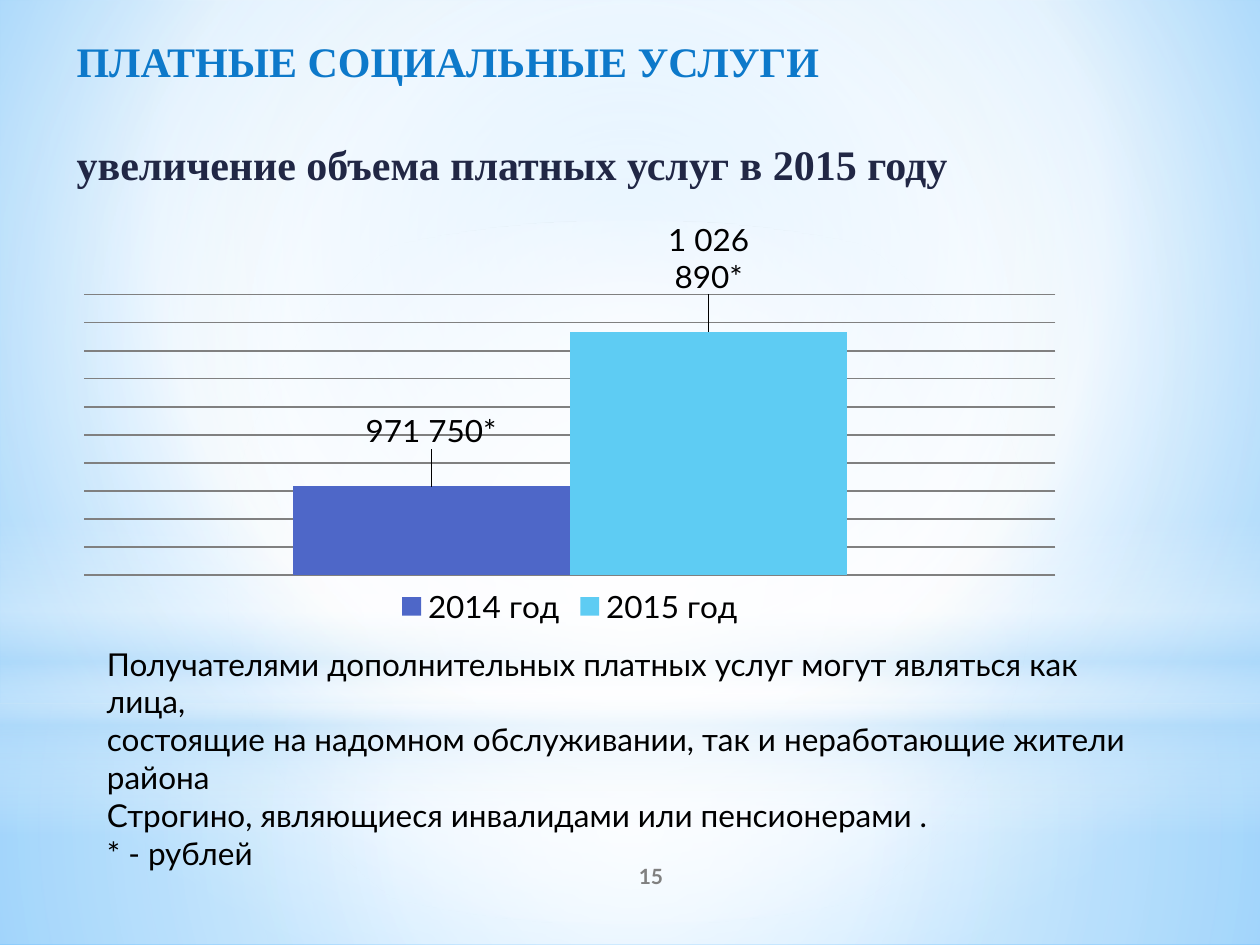
import pptx
import pptx.chart.data
import pptx.dml.color
import pptx.enum.chart
import pptx.enum.shapes
import pptx.enum.text
import pptx.oxml
import pptx.oxml.ns
import pptx.util
from lxml import etree

Pt = pptx.util.Pt
qn = pptx.oxml.ns.qn
ALIGN = pptx.enum.text.PP_ALIGN
ANCHOR = pptx.enum.text.MSO_ANCHOR
SHAPES = pptx.enum.shapes.MSO_SHAPE

THEME = {
    "heading_font": "Times New Roman", "body_font": "Lato",
    "heading_size": 24, "body_size": 18, "number_size": 12,
    "heading": "0D79CA", "subheading": "212745", "body": "000000",
    "number": "808080", "grid": "808080",
    "white": "FFFFFF", "haze": "B4DCFA", "sky": "9ED5FF", "deep_sky": "5BB9FF",
}

HEADING = [("ПЛАТНЫЕ СОЦИАЛЬНЫЕ УСЛУГИ", "heading"),
           ("увеличение объема платных услуг в 2015 году", "subheading")]
RECIPIENTS = [(line, "body") for line in (
    "Получателями дополнительных платных услуг могут являться как лица,",
    "состоящие на надомном обслуживании, так и неработающие жители района",
    "Строгино, являющиеся инвалидами или пенсионерами .",
    "* - рублей",
)]
PAGE_NUMBER = [("15", "number")]
YEARS = [("2014 год", 971750, "971 750*", "4E67C8"),
         ("2015 год", 1026890, "1 026 890*", "5ECCF3")]
AXIS_MIN, AXIS_MAX, AXIS_STEP = 940000, 1040000, 10000
PLOT_AREA = {"x": 0.02, "y": 0.16, "w": 0.96, "h": 0.7}
LABEL_LIFT = -0.08

CENTRE = (50, 50, 50, 50)
BACKDROP = ([(0, "sky", 100), (60, "white", 100), (100, "deep_sky", 100)], (20, 10, 20, 60))
LAYERS = [
    (SHAPES.RECTANGLE, 402, 138,
     [(0, "white", 91), (37, "white", 76), (100, "haze", 79)], CENTRE),
    (SHAPES.RECTANGLE, 0, 402,
     [(0, "white", 89), (48, "white", 62), (100, "haze", 79)], CENTRE),
    (SHAPES.RECTANGLE, 297, 180,
     [(0, "white", 0), (29, "white", 30), (45, "haze", 40),
      (55, "white", 26), (65, "haze", 60), (100, "white", 0)], None),
    (SHAPES.OVAL, 126, 402, [(0, "white", 100), (56, "white", 0)], CENTRE),
]


def rgb(value):
    return pptx.dml.color.RGBColor.from_string(value)


def set_gradient(fill, owner, stops, focus):
    fill.gradient()
    gradient = next(owner.iter(qn("a:gradFill")))
    for child in list(gradient):
        gradient.remove(child)
    stop_list = etree.SubElement(gradient, qn("a:gsLst"))
    for position, colour, opacity in stops:
        stop = etree.SubElement(stop_list, qn("a:gs"), pos=str(position * 1000))
        tint = etree.SubElement(stop, qn("a:srgbClr"), val=THEME[colour])
        if opacity < 100:
            etree.SubElement(tint, qn("a:alpha"), val=str(opacity * 1000))
    if focus:
        path = etree.SubElement(gradient, qn("a:path"), path="circle")
        sides = {side: str(value * 1000) for side, value in zip("ltrb", focus)}
        etree.SubElement(path, qn("a:fillToRect"), **sides)
    else:
        etree.SubElement(gradient, qn("a:lin"), ang="5400000", scaled="0")


def add_text(slide, lines, box, *, font, size, bold=False, align=ALIGN.LEFT,
             anchor=ANCHOR.TOP, gap=0, top_inset=3.6):
    frame = slide.shapes.add_textbox(*map(Pt, box)).text_frame
    frame.word_wrap = True
    frame.vertical_anchor = anchor
    frame.margin_top = Pt(top_inset)
    for index, (text, colour) in enumerate(lines):
        paragraph = frame.add_paragraph() if index else frame.paragraphs[0]
        paragraph.alignment = align
        paragraph.space_before = Pt(gap if index else 0)
        run = paragraph.add_run()
        run.text = text
        run.font.name = THEME[font]
        run.font.size = Pt(THEME[size])
        run.font.bold = bold
        run.font.color.rgb = rgb(THEME[colour])


def style_font(font):
    font.name = THEME["body_font"]
    font.size = Pt(THEME["body_size"])
    font.color.rgb = rgb(THEME["body"])


def manual_layout(**values):
    layout = etree.Element(qn("c:layout"))
    manual = etree.SubElement(layout, qn("c:manualLayout"))
    for key, value in values.items():
        etree.SubElement(manual, qn(f"c:{key}"), val=str(value))
    return layout


def add_services_chart(slide, box):
    data = pptx.chart.data.CategoryChartData()
    data.categories = ["1"]
    for year, amount, _, _ in YEARS:
        data.add_series(year, [amount])
    chart = slide.shapes.add_chart(
        pptx.enum.chart.XL_CHART_TYPE.COLUMN_CLUSTERED, *map(Pt, box), data).chart
    chart.has_title = False
    style_font(chart.font)
    chart.has_legend = True
    chart.legend.position = pptx.enum.chart.XL_LEGEND_POSITION.BOTTOM
    chart.legend.include_in_layout = False
    style_font(chart.legend.font)

    chart.category_axis.visible = False
    amounts = chart.value_axis
    amounts.visible = False
    amounts.minimum_scale, amounts.maximum_scale = AXIS_MIN, AXIS_MAX
    amounts.major_unit = AXIS_STEP
    amounts.has_major_gridlines = True
    amounts.major_gridlines.format.line.color.rgb = rgb(THEME["grid"])
    amounts.major_gridlines.format.line.width = Pt(0.75)

    plot = chart.plots[0]
    plot.gap_width, plot.overlap = 150, 0
    plot.vary_by_categories = False
    for series, (_, _, caption, colour) in zip(plot.series, YEARS):
        series.format.fill.solid()
        series.format.fill.fore_color.rgb = rgb(colour)
        series.data_labels.show_value = True
        style_font(series.data_labels.font)
        label = series.points[0].data_label
        label.position = pptx.enum.chart.XL_LABEL_POSITION.OUTSIDE_END
        run = label.text_frame.paragraphs[0].add_run()
        run.text = caption
        style_font(run.font)
        label_index = next(series._element.iter(qn("c:dLbl"))).find(qn("c:idx"))
        label_index.addnext(manual_layout(x=0, y=LABEL_LIFT))

    plot_area = next(chart._chartSpace.iter(qn("c:plotArea")))
    for old_layout in plot_area.findall(qn("c:layout")):
        plot_area.remove(old_layout)
    plot_area.insert(0, manual_layout(
        layoutTarget="inner", xMode="edge", yMode="edge", **PLOT_AREA))


def main():
    deck = pptx.Presentation()
    deck.slide_width, deck.slide_height = Pt(720), Pt(540)
    slide = deck.slides.add_slide(deck.slide_layouts[6])
    set_gradient(slide.background.fill, slide._element, *BACKDROP)
    for outline, top, height, stops, focus in LAYERS:
        layer = slide.shapes.add_shape(outline, 0, Pt(top), deck.slide_width, Pt(height))
        layer.shadow.inherit = False
        layer.line.fill.background()
        set_gradient(layer.fill, layer._element.spPr, stops, focus)

    add_text(slide, PAGE_NUMBER, (300, 486, 144, 28.8), font="body_font",
             size="number_size", bold=True, align=ALIGN.CENTER, anchor=ANCHOR.MIDDLE)
    add_text(slide, HEADING, (36.7, 15.1, 648, 108), font="heading_font",
             size="heading_size", bold=True, gap=30, top_inset=5)
    add_services_chart(slide, (36.7, 126, 578, 234.7))
    add_text(slide, RECIPIENTS, (54, 343.4, 614, 116.6), font="body_font",
             size="body_size", top_inset=25)
    deck.save("out.pptx")


if __name__ == "__main__":
    main()
